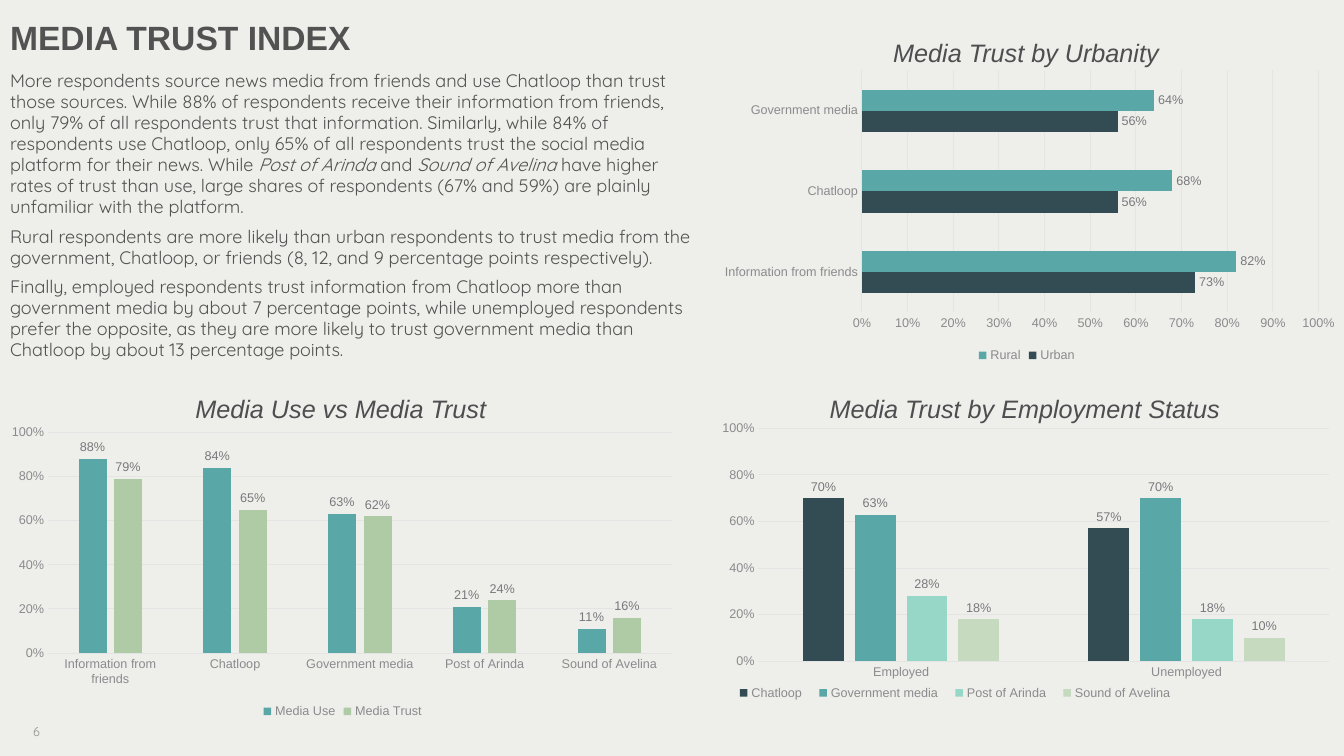
from lxml import etree
from pptx import Presentation
from pptx import util as u
from pptx.chart import data as chart_data
from pptx.dml.color import RGBColor
from pptx.enum import chart as kinds
from pptx.enum import text
from pptx.oxml import ns

COLOURS = {
    "background": "EEEEEA", "body": "525252", "caption": "4E4E50",
    "number": "919191", "axis": "8B8B8E", "label": "79797D", "grid": "E4E4E5",
    "navy": "334C53", "teal": "59A7A7", "sage": "AFCBA5",
    "mint": "97D7C7", "pale": "C6DABF",
}
HEADING_FONT, BODY_FONT = "Arial", "Quicksand"

FRIENDS, SOCIAL, STATE = "Information from friends", "Chatloop", "Government media"
DAILY, RADIO = "Post of Arinda", "Sound of Avelina"

# Every second piece of a paragraph is italic
BODY = [
    ["More respondents source news media from friends and use Chatloop than trust "
     "those sources. While 88% of respondents receive their information from friends, "
     "only 79% of all respondents trust that information. Similarly, while 84% of "
     "respondents use Chatloop, only 65% of all respondents trust the social media "
     "platform for their news. While ", DAILY, " and ", RADIO,
     " have higher rates of trust than use, large shares of respondents "
     "(67% and 59%) are plainly unfamiliar with the platform."],
    ["Rural respondents are more likely than urban respondents to trust media from the "
     "government, Chatloop, or friends (8, 12, and 9 percentage points respectively)."],
    ["Finally, employed respondents trust information from Chatloop more than "
     "government media by about 7 percentage points, while unemployed respondents "
     "prefer the opposite, as they are more likely to trust government media than "
     "Chatloop by about 13 percentage points."],
]


def colour(name):
    return RGBColor.from_string(COLOURS[name])


def style_font(font, size, name, family=HEADING_FONT, bold=False, italic=False):
    font.size = u.Pt(size)
    font.name = family
    font.color.rgb = colour(name)
    font.bold, font.italic = bold, italic


def set_layout(parent, index, shares, inner=False):
    """Fix a chart part at x, y, width, height shares of the chart."""
    for old in parent.findall(ns.qn("c:layout")):
        parent.remove(old)
    layout = etree.Element(ns.qn("c:layout"))
    manual = etree.SubElement(layout, ns.qn("c:manualLayout"))
    settings = [("layoutTarget", "inner")] if inner else []
    settings += [("xMode", "edge"), ("yMode", "edge")]
    settings += zip("xywh", shares)
    for tag, value in settings:
        etree.SubElement(manual, ns.qn(f"c:{tag}")).set("val", str(value))
    parent.insert(index, layout)


class SlideBuilder:
    """Places elements by percent of the slide's width and height."""

    def __init__(self, deck):
        self.deck = deck
        self.slide = deck.slides.add_slide(deck.slide_layouts[1])
        fill = self.slide.background.fill
        fill.solid()
        fill.fore_color.rgb = colour("background")

    def place(self, left, top, width, height):
        across, down = self.deck.slide_width / 100, self.deck.slide_height / 100
        return (round(left * across), round(top * down),
                round(width * across), round(height * down))

    def move(self, shape, area):
        shape.left, shape.top, shape.width, shape.height = self.place(*area)
        shape.text_frame.auto_size = text.MSO_AUTO_SIZE.NONE
        shape.text_frame.word_wrap = True

    def title(self, area, words):
        box = self.slide.shapes.title
        self.move(box, area)
        box.text_frame.text = words
        box.text_frame.vertical_anchor = text.MSO_ANCHOR.MIDDLE
        para = box.text_frame.paragraphs[0]
        para.alignment = text.PP_ALIGN.LEFT
        para.line_spacing = 0.9
        style_font(para.runs[0].font, 24, "body", bold=True)

    def body(self, area, paragraphs):
        box = self.slide.placeholders[1]
        self.move(box, area)
        frame = box.text_frame
        for number, pieces in enumerate(paragraphs):
            para = frame.add_paragraph() if number else frame.paragraphs[0]
            props = para._p.get_or_add_pPr()
            props.set("marL", "0")
            props.set("indent", "0")
            etree.SubElement(props, ns.qn("a:buNone"))
            para.space_before = u.Pt(6 if number else 0)
            para.line_spacing = 0.97
            for position, piece in enumerate(pieces):
                span = para.add_run()
                span.text = piece
                style_font(span.font, 12.9, "body", BODY_FONT, italic=position % 2 == 1)

    def label(self, area, words, size, name, family=HEADING_FONT, italic=False, wrap=False):
        box = self.slide.shapes.add_textbox(*self.place(*area))
        box.text_frame.word_wrap = wrap
        box.text_frame.text = words
        span = box.text_frame.paragraphs[0].runs[0]
        style_font(span.font, size, name, family, italic=italic)

    def caption(self, area, words):
        self.label(area, words, 18, "caption", italic=True)

    def chart(self, area, kind, categories, series, plot_area, gap=219, overlap=-27,
              major=0.2, legend_area=None):
        source = chart_data.CategoryChartData(number_format="0%")
        source.categories = categories
        for name, _, values in series:
            source.add_series(name, values)
        chart = self.slide.shapes.add_chart(kind, *self.place(*area), source).chart
        chart.has_title = False
        style_font(chart.font, 10, "caption")

        # Axes
        for axis in (chart.category_axis, chart.value_axis):
            axis.major_tick_mark = axis.minor_tick_mark = kinds.XL_TICK_MARK.NONE
            style_font(axis.tick_labels.font, 9, "axis")
        scale = chart.value_axis
        scale.minimum_scale, scale.maximum_scale, scale.major_unit = 0, 1, major
        scale.tick_labels.number_format = "0%"
        scale.tick_labels.number_format_is_linked = False
        scale.format.line.fill.background()
        chart.category_axis.has_major_gridlines = False
        for line in (chart.category_axis.format.line, scale.major_gridlines.format.line):
            line.color.rgb = colour("grid")
            line.width = u.Pt(0.75)

        # Bars and their values
        plot = chart.plots[0]
        plot.gap_width, plot.overlap, plot.vary_by_categories = gap, overlap, False
        for bars, (_, name, _) in zip(plot.series, series):
            bars.format.fill.solid()
            bars.format.fill.fore_color.rgb = colour(name)
            labels = bars.data_labels
            labels.show_value = True
            labels.position = kinds.XL_LABEL_POSITION.OUTSIDE_END
            labels.number_format, labels.number_format_is_linked = "0%", False
            style_font(labels.font, 9, "label")

        # Legend and layout
        chart.has_legend = True
        chart.legend.position = kinds.XL_LEGEND_POSITION.BOTTOM
        chart.legend.include_in_layout = False
        style_font(chart.legend.font, 9, "axis")
        root = chart.element
        set_layout(root.find(".//" + ns.qn("c:plotArea")), 0, plot_area, inner=True)
        if legend_area:
            set_layout(root.find(".//" + ns.qn("c:legend")), 1, legend_area)


def main():
    deck = Presentation()
    deck.slide_width, deck.slide_height = u.Inches(13.33), u.Inches(7.5)
    page = SlideBuilder(deck)
    column, bar = kinds.XL_CHART_TYPE.COLUMN_CLUSTERED, kinds.XL_CHART_TYPE.BAR_CLUSTERED

    # Text
    page.title((0, 0, 29.03, 10.53), "MEDIA TRUST INDEX")
    page.body((0, 8.67, 52.96, 42.53), BODY)
    page.label((1.73, 95.07, 4.13, 4.8), "6", 9, "number", BODY_FONT, wrap=True)

    # Use against trust
    page.chart((0, 55.6, 51, 40), column, [FRIENDS, SOCIAL, STATE, DAILY, RADIO],
               [("Media Use", "teal", (0.88, 0.84, 0.63, 0.21, 0.11)),
                ("Media Trust", "sage", (0.79, 0.65, 0.62, 0.24, 0.16))],
               (0.07, 0.04, 0.91, 0.73))
    page.caption((13.8, 51.33, 23.33, 5.33), "Media Use vs Media Trust")

    # Trust by urbanity
    page.chart((52.81, 8.53, 47.19, 40), bar, [FRIENDS, SOCIAL, STATE],
               [("Urban", "navy", (0.73, 0.56, 0.56)),
                ("Rural", "teal", (0.82, 0.68, 0.64))],
               (0.24, 0.02, 0.72, 0.8), gap=182, overlap=0, major=0.1)
    page.caption((65.72, 4.27, 21.46, 5.33), "Media Trust by Urbanity")

    # Trust by employment status
    page.chart((52.66, 55.07, 47.19, 40), column, ["Employed", "Unemployed"],
               [(SOCIAL, "navy", (0.7, 0.57)), (STATE, "teal", (0.63, 0.7)),
                (DAILY, "mint", (0.28, 0.18)), (RADIO, "pale", (0.18, 0.1))],
               (0.08, 0.04, 0.9, 0.77), legend_area=(0.03, 0.88, 0.72, 0.07))
    page.caption((60.99, 51.33, 30.83, 5.33), "Media Trust by Employment Status")

    deck.save("out.pptx")


if __name__ == "__main__":
    main()
